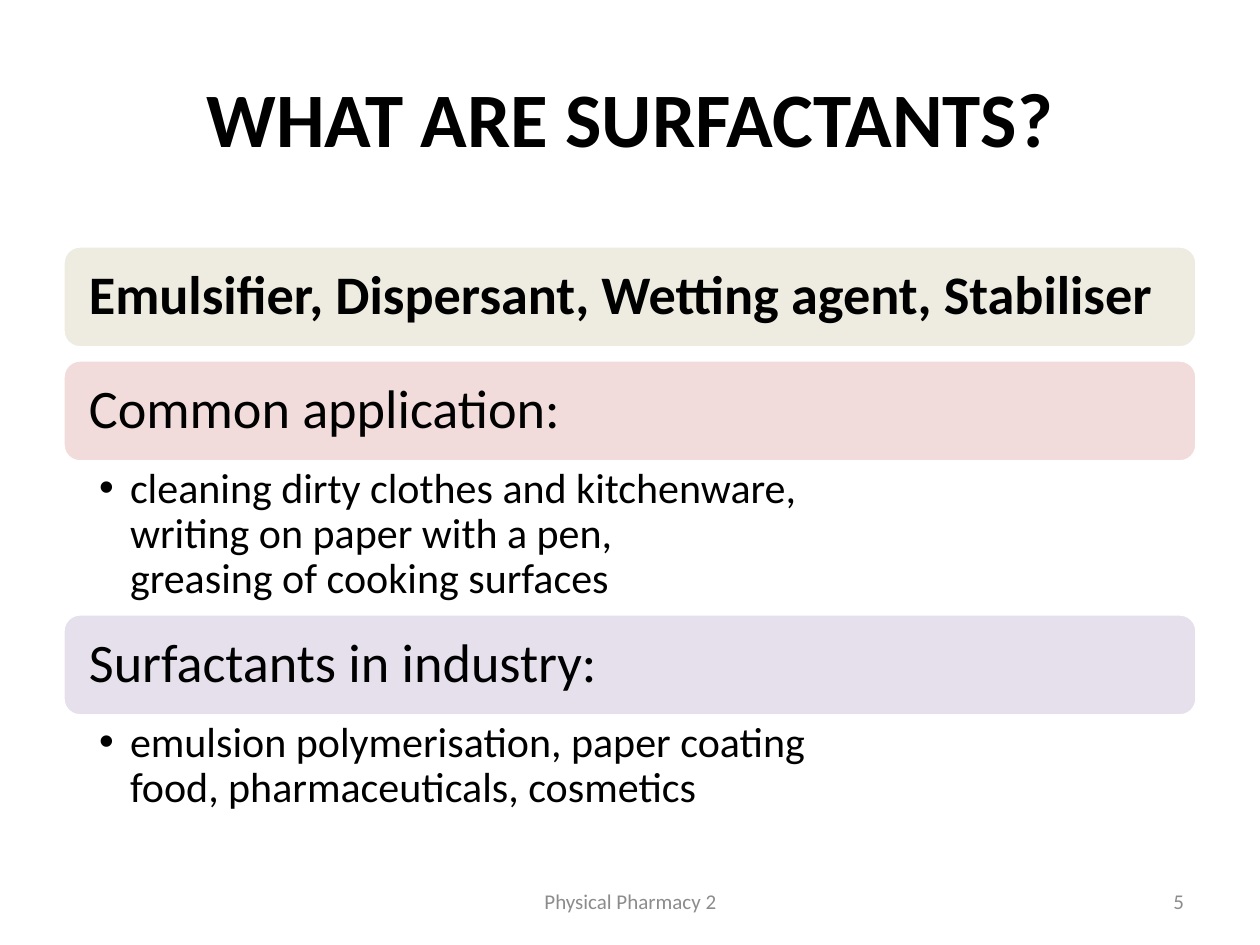
from lxml import etree
from pptx import Presentation
from pptx.dml.color import RGBColor
from pptx.enum.shapes import MSO_SHAPE
from pptx.enum.text import MSO_ANCHOR, MSO_AUTO_SIZE, PP_ALIGN
from pptx.oxml.ns import qn
from pptx.util import Pt

PX = 914400 / 126
LEFT, WIDTH = 63, 1134
BAR_TOP, BAR_HEIGHT, BAR_GAP = 246, 102, 12

BLACK = RGBColor(0x00, 0x00, 0x00)
WHITE = RGBColor(0xFF, 0xFF, 0xFF)
GREY = RGBColor(0x8C, 0x8C, 0x8C)
CREAM = RGBColor(0xEE, 0xEC, 0xE1)
ROSE = RGBColor(0xF2, 0xDC, 0xDB)
LILAC = RGBColor(0xE6, 0xE0, 0xEC)

ROUNDED = MSO_SHAPE.ROUNDED_RECTANGLE
TOP, MIDDLE = MSO_ANCHOR.TOP, MSO_ANCHOR.MIDDLE
NO_AUTOFIT = MSO_AUTO_SIZE.NONE
ALIGN_LEFT, CENTER, ALIGN_RIGHT = PP_ALIGN.LEFT, PP_ALIGN.CENTER, PP_ALIGN.RIGHT

SECTIONS = [
    ("Emulsifier, Dispersant, Wetting agent, Stabiliser", CREAM, True, None, BAR_GAP),
    ("Common application:", ROSE, False,
     "cleaning dirty clothes and kitchenware,\v"
     "writing on paper with a pen,\v"
     "greasing of cooking surfaces", 152),
    ("Surfactants in industry:", LILAC, False,
     "emulsion polymerisation, paper coating\v"
     "food, pharmaceuticals, cosmetics", 103),
]


def emu(px):
    return round(px * PX)


def place(sp, x, y, w, h):
    sp.left, sp.top, sp.width, sp.height = map(emu, (x, y, w, h))


def set_text(sp, text, size, color=BLACK, bold=False, align=ALIGN_LEFT,
             anchor=MIDDLE, margins=(13, 6, 13, 6), spacing=1.0, level=0):
    tf = sp.text_frame
    tf.word_wrap = True
    tf.auto_size = NO_AUTOFIT
    tf.vertical_anchor = anchor
    tf.margin_left, tf.margin_top, tf.margin_right, tf.margin_bottom = map(emu, margins)
    p = tf.paragraphs[0]
    p.text = text
    p.level = level
    p.alignment = align
    p.line_spacing = spacing
    p.space_before = Pt(0)
    for r in p.runs:
        r.font.name = "Calibri"
        r.font.size = Pt(size)
        r.font.bold = bold
        r.font.color.rgb = color
    return p


def add_bar(s, y, text, fill, bold):
    sp = s.shapes.add_shape(ROUNDED, emu(LEFT), emu(y), emu(WIDTH), emu(BAR_HEIGHT))
    sp.shadow.inherit = False
    sp.fill.solid()
    sp.fill.fore_color.rgb = fill
    sp.line.color.rgb = WHITE
    sp.line.width = Pt(2)
    set_text(sp, text, 31, bold=bold, margins=(21, 21, 21, 21), spacing=0.9)


def fill_list(sp, y, h, text):
    place(sp, LEFT, y, WIDTH, h)
    p = set_text(sp, text, 24, anchor=TOP, margins=(36, 5, 30, 5), spacing=0.9, level=1)
    pPr = p._p.get_or_add_pPr()
    pPr.set("marL", str(emu(31)))
    pPr.set("indent", str(emu(-31)))
    etree.SubElement(pPr, qn("a:buFont")).set("typeface", "Arial")
    etree.SubElement(pPr, qn("a:buChar")).set("char", "•")


def add_footer(s, x, w, text, align):
    sp = s.shapes.add_textbox(emu(x), emu(876), emu(w), emu(50))
    set_text(sp, text, 12, color=GREY, align=align)


def main():
    prs = Presentation()
    prs.slide_width, prs.slide_height = emu(1260), emu(945)
    s = prs.slides.add_slide(prs.slide_layouts[3])

    title = s.shapes.title
    place(title, LEFT, 38, WIDTH, 158)
    set_text(title, "WHAT ARE SURFACTANTS?", 44, bold=True, align=CENTER)

    bodies = iter([s.placeholders[1], s.placeholders[2]])
    y = BAR_TOP
    for heading, fill, bold, items, below in SECTIONS:
        add_bar(s, y, heading, fill, bold)
        y += BAR_HEIGHT
        if items:
            fill_list(next(bodies), y, below, items)
        y += below

    add_footer(s, 431, 399, "Physical Pharmacy 2", CENTER)
    add_footer(s, 903, 294, "5", ALIGN_RIGHT)
    prs.save("out.pptx")


if __name__ == "__main__":
    main()
